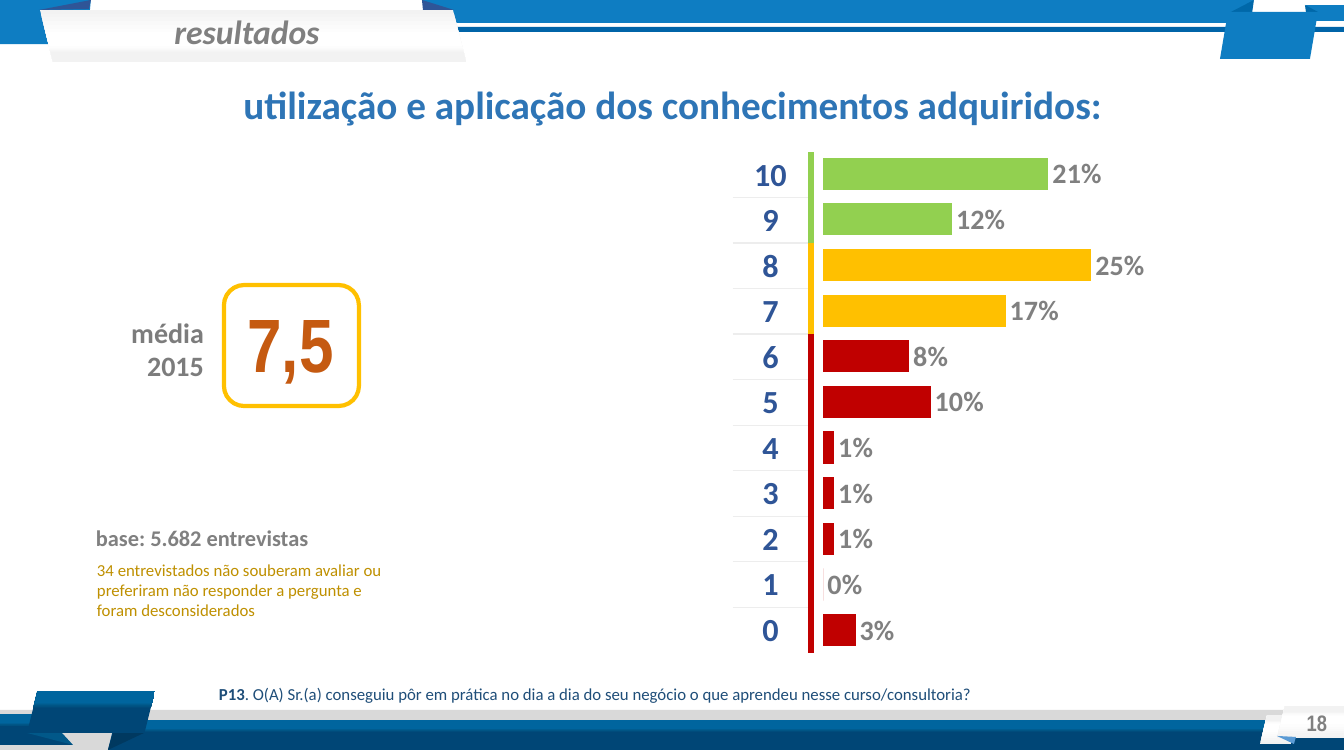
from lxml.etree import SubElement
from pptx import Presentation
from pptx.chart.data import CategoryChartData
from pptx.dml.color import RGBColor
from pptx.enum.chart import XL_CHART_TYPE, XL_LABEL_POSITION
from pptx.enum.shapes import MSO_SHAPE
from pptx.enum.text import MSO_ANCHOR, MSO_AUTO_SIZE, PP_ALIGN
from pptx.oxml import parse_xml
from pptx.oxml.ns import nsdecls, qn
from pptx.util import Pt

PX = 914400 / 100.8
WHITE = RGBColor(0xFF, 0xFF, 0xFF)
SILVER = RGBColor(0xF2, 0xF2, 0xF2)
LIGHT = RGBColor(0xD9, 0xD9, 0xD9)
RULE = RGBColor(0xED, 0xED, 0xED)
GRAY = RGBColor(0x80, 0x80, 0x80)
MID_GRAY = RGBColor(0x7C, 0x7C, 0x7C)
BLUE = RGBColor(0x0E, 0x7D, 0xC2)
STRIPE = RGBColor(0x00, 0x64, 0xA8)
FOLD = RGBColor(0x2F, 0x55, 0x97)
BADGE_FOLD = RGBColor(0x00, 0x68, 0xA9)
NAVY = RGBColor(0x00, 0x46, 0x76)
DEEP = RGBColor(0x00, 0x39, 0x60)
OCEAN = RGBColor(0x01, 0x58, 0x89)
SKY = RGBColor(0x5B, 0x9B, 0xD5)
TITLE = RGBColor(0x2E, 0x75, 0xB6)
QUESTION = RGBColor(0x1F, 0x4E, 0x79)
OCHRE = RGBColor(0xBF, 0x90, 0x00)
ORANGE = RGBColor(0xC5, 0x5A, 0x11)
GREEN = RGBColor(0x92, 0xD0, 0x50)
YELLOW = RGBColor(0xFF, 0xC0, 0x00)
RED = RGBColor(0xC0, 0x00, 0x00)
PAPER = [(0, SILVER), (50, WHITE), (68, WHITE), (83, SILVER)]
SEA = [(0, NAVY), (59, NAVY), (65, RGBColor(0x00, 0x55, 0x85)), (72, RGBColor(0x00, 0x65, 0x9E))]


def paint(sp, fill):
    sp.shadow.inherit = False
    sp.line.fill.background()
    if isinstance(fill, RGBColor):
        sp.fill.solid()
        sp.fill.fore_color.rgb = fill
        return
    stops = "".join(f'<a:gs pos="{pos * 1000}"><a:srgbClr val="{rgb}"/></a:gs>' for pos, rgb in fill)
    grad = parse_xml(f'<a:gradFill {nsdecls("a")} rotWithShape="1"><a:gsLst>{stops}</a:gsLst>'
                     '<a:lin ang="16200000" scaled="0"/></a:gradFill>')
    sp.element.spPr.find(qn("a:prstGeom") if sp.element.spPr.find(qn("a:prstGeom")) is not None
                         else qn("a:custGeom")).addnext(grad)


def write(sp, paragraphs, font, size, color, align=PP_ALIGN.LEFT, bold=True, inset=True,
          anchor=MSO_ANCHOR.TOP):
    tf = sp.text_frame
    tf.word_wrap = True
    tf.auto_size = MSO_AUTO_SIZE.NONE
    tf.vertical_anchor = anchor
    if not inset:
        tf.margin_left = tf.margin_right = tf.margin_top = tf.margin_bottom = 0
    tf.text = "\n".join(paragraphs)
    for p in tf.paragraphs:
        p.alignment = align
        p.font.name = font
        p.font.size = Pt(size)
        p.font.bold = bold
        p.font.color.rgb = color
    return tf.paragraphs[0]


prs = Presentation()
prs.slide_width, prs.slide_height = round(1344 * PX), round(756 * PX)
s = prs.slides.add_slide(prs.slide_layouts[5])

SLANT = MSO_SHAPE.PARALLELOGRAM
decor = [
    (None, [(445, 23), (422, 0), (1253, 0), (1250, 23)], BLUE, None, None),
    (SLANT, (437, 27, 1006, 5), STRIPE, 0.25, (180, "flipH")),
    (SLANT, (-7, -2, 98, 46), BLUE, 0.09, None),
    (SLANT, (40, 10, 426, 52), PAPER, 0.25, (180, "flipH")),
    (None, [(39, 10), (91, 0), (89, 9)], FOLD, None, None),
    (MSO_SHAPE.RECTANGLE, (0, 710, 1344, 40), LIGHT, None, None),
    (SLANT, (108, 720, 1268, 30), SEA, 0.25, None),
    (None, [(73, 745), (32, 714), (-25, 714), (-18, 745)], SEA, None, None),
    (None, [(108, 750), (144, 733), (113, 733)], DEEP, None, None),
    (None, [(73, 745), (27, 733), (62, 733)], OCEAN, None, None),
    (SLANT, (27, 691, 128, 42), SEA, 0.25, None),
    (SLANT, (1260, 715, 38, 29), PAPER, 0.25, None),
    (SLANT, (1277, 706, 77, 32), PAPER, 0.25, None),
    (None, [(1277, 736), (1294, 744), (1296, 737)], SKY, None, None),
    (None, [(454, 10), (422, 0), (423, 10)], FOLD, None, None),
    (None, [(1252, 14), (1229, 13), (1254, 0)], BADGE_FOLD, None, None),
    (SLANT, (1306, 5, 42, 16), BLUE, 0.17, (0, "flipH")),
    (None, [(1306, 12), (1318, 12), (1305, 5)], BADGE_FOLD, None, None),
    (SLANT, (1220, 12, 98, 47), BLUE, 0.17, None),
]
for kind, place, fill, adj, turn in decor:
    if kind is None:
        outline = s.shapes.build_freeform(*place[0], scale=PX)
        outline.add_line_segments(place[1:], close=True)
        sp = outline.convert_to_shape()
    else:
        sp = s.shapes.add_shape(kind, *[round(v * PX) for v in place])
    if adj:
        sp.adjustments[0] = adj
    if turn:
        sp.rotation = turn[0]
        sp.element.spPr.get_or_add_xfrm().set(turn[1], "1")
    paint(sp, fill)

title = s.shapes.title
title.left, title.top, title.width, title.height = [round(v * PX) for v in (215, 75, 915, 70)]
write(title, ["utilização e aplicação dos conhecimentos adquiridos:"], "Calibri", 28, TITLE, PP_ALIGN.CENTER)

frame = s.shapes.add_shape(MSO_SHAPE.ROUNDED_RECTANGLE, *[round(v * PX) for v in (224, 285, 135, 121)])
paint(frame, WHITE)
frame.line.color.rgb = YELLOW
frame.line.width = Pt(3)

CENTER, RIGHT, LEFT = PP_ALIGN.CENTER, PP_ALIGN.RIGHT, PP_ALIGN.LEFT
TOP, MIDDLE = MSO_ANCHOR.TOP, MSO_ANCHOR.MIDDLE
NOTE = "34 entrevistados não souberam avaliar ou preferiram não responder a pergunta e foram desconsiderados"
labels = [
    ((1035, 703, 302, 40), ["18"], "Arial Narrow", 16, GRAY, RIGHT, True, True, MIDDLE),
    ((60, 11, 374, 42), ["resultados"], "Calibri", 24, GRAY, CENTER, True, True, TOP),
    ((86, 522, 256, 37), ["base: 5.682 entrevistas"], "Calibri", 16, GRAY, LEFT, True, True, TOP),
    ((97, 548, 293, 84), [NOTE], "Calibri", 12, OCHRE, LEFT, False, False, MIDDLE),
    ((224, 292, 133, 102), ["7,5"], "Arial Narrow", 54, ORANGE, CENTER, True, True, TOP),
    ((64, 315, 140, 68), ["média", "2015"], "Calibri", 20, MID_GRAY, RIGHT, True, False, TOP),
]
for place, *style in labels:
    p = write(s.shapes.add_textbox(*[round(v * PX) for v in place]), *style)
    if p.text == "resultados":
        p.font.italic = True
    if p.text == "resultados" or p.text.startswith("base"):
        p.line_spacing = 0.9

question = s.shapes.add_textbox(*[round(v * PX) for v in (209, 679, 1048, 27)])
p = write(question, ["P13"], "Calibri", 12, QUESTION, bold=False)
p.runs[0].font.bold = True
r = p.add_run()
r.text = ". O(A) Sr.(a) conseguiu pôr em prática no dia a dia do seu negócio o que aprendeu nesse curso/consultoria?"

SCORE_COLORS = [RED] * 7 + [YELLOW] * 2 + [GREEN] * 2
graphic = s.shapes.add_table(11, 2, *[round(v * PX) for v in (733, 152, 81, 501)])
table = graphic.table
table.first_row = table.horz_banding = False
graphic.element.find(".//" + qn("a:tableStyleId")).text = "{2D5ABB26-0587-4C30-8999-92F81FD0307C}"
table.columns[0].width, table.columns[1].width = round(75 * PX), round(6 * PX)
for i, score in enumerate(range(10, -1, -1)):
    table.rows[i].height = round(501 * PX / 11)
    number, strip = table.cell(i, 0), table.cell(i, 1)
    for cell in (number, strip):
        cell.margin_left = cell.margin_right = cell.margin_top = round(PX)
        cell.margin_bottom = 0
    number.vertical_anchor = MIDDLE
    number.text = str(score)
    p = number.text_frame.paragraphs[0]
    p.alignment = CENTER
    p.font.name = "Calibri"
    p.font.size = Pt(23)
    p.font.bold = True
    p.font.color.rgb = FOLD
    number.fill.background()
    strip.fill.solid()
    strip.fill.fore_color.rgb = SCORE_COLORS[score]
    edges = [tag for tag, shown in (("a:lnT", score < 10), ("a:lnB", score > 0)) if shown]
    tcPr = number._tc.get_or_add_tcPr()
    for k, tag in enumerate(edges):
        ln = SubElement(tcPr, qn(tag), w="12700")
        solid = SubElement(ln, qn("a:solidFill"))
        SubElement(solid, qn("a:srgbClr"), val=str(RULE))
        tcPr.insert(k, ln)

data = CategoryChartData(number_format="###0%")
data.categories = [str(n) for n in range(1, 12)]
data.add_series("Series 1", (0.03, 0, 0.01, 0.01, 0.01, 0.1, 0.08, 0.17, 0.25, 0.12, 0.21))
chart = s.shapes.add_chart(XL_CHART_TYPE.BAR_CLUSTERED, *[round(v * PX) for v in (803, 151, 342, 502)], data).chart
chart.has_legend = chart.has_title = False
chart.font.name = "Calibri"
chart.font.size = Pt(10)
chart.category_axis.visible = chart.value_axis.visible = False
chart.value_axis.has_major_gridlines = False
chart.value_axis.minimum_scale, chart.value_axis.maximum_scale = 0, 0.3
plot = chart.plots[0]
plot.gap_width = 42
plot.vary_by_categories = False
series = plot.series[0]
series.format.fill.solid()
series.format.fill.fore_color.rgb = SKY
for i, color in enumerate(SCORE_COLORS):
    fill = series.points[i].format.fill
    fill.solid()
    fill.fore_color.rgb = color
dl = series.data_labels
dl.show_value = True
dl.number_format = "###0%"
dl.number_format_is_linked = False
dl.position = XL_LABEL_POSITION.OUTSIDE_END
dl.font.name = "Calibri"
dl.font.size = Pt(20)
dl.font.bold = True
dl.font.color.rgb = GRAY
area = chart.element.find(".//" + qn("c:plotArea"))
for old in area.findall(qn("c:layout")):
    area.remove(old)
area.insert(0, parse_xml(
    f'<c:layout {nsdecls("c")}><c:manualLayout><c:layoutTarget val="inner"/><c:xMode val="edge"/>'
    '<c:yMode val="edge"/><c:x val="0.06"/><c:y val="0"/><c:w val="0.94"/><c:h val="1"/>'
    '</c:manualLayout></c:layout>'))

prs.save("out.pptx")
